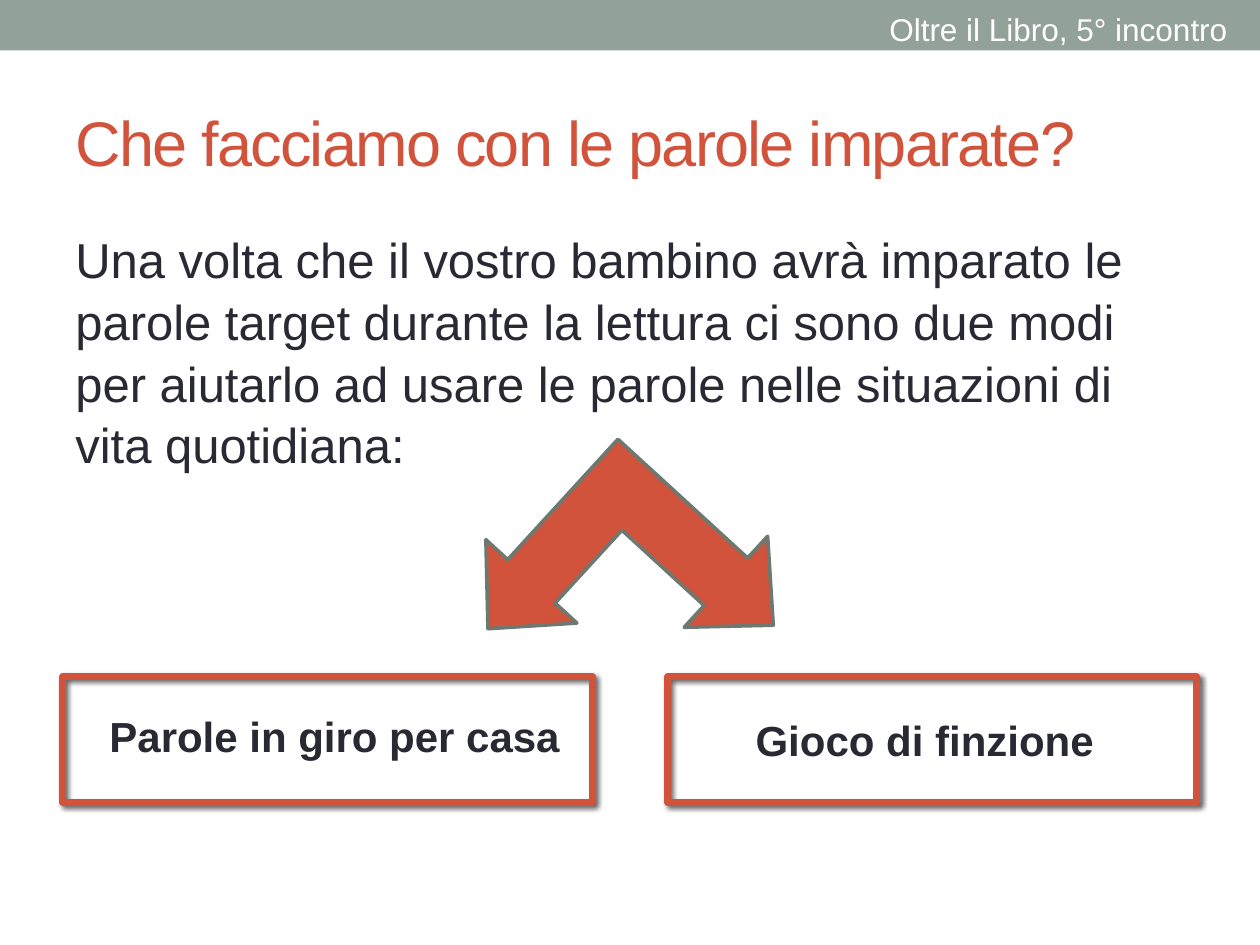
from lxml import etree
from pptx import Presentation
from pptx.dml.color import RGBColor
from pptx.enum.shapes import MSO_SHAPE
from pptx.enum.text import MSO_ANCHOR, PP_ALIGN
from pptx.oxml import parse_xml
from pptx.util import Inches, Pt

RECT, FORK = MSO_SHAPE.RECTANGLE, MSO_SHAPE.LEFT_UP_ARROW
TOP, MIDDLE = MSO_ANCHOR.TOP, MSO_ANCHOR.MIDDLE
LEFT, CENTER = PP_ALIGN.LEFT, PP_ALIGN.CENTER
SAGE = RGBColor(0x93, 0xA2, 0x99)
DARK_SAGE = RGBColor(0x6D, 0x78, 0x71)
RED = RGBColor(0xD2, 0x53, 0x3C)
INK = RGBColor(0x29, 0x29, 0x34)
WHITE = RGBColor(0xFF, 0xFF, 0xFF)

HEADER = "Oltre il Libro, 5° incontro"
TITLE = "Che facciamo con le parole imparate?"
BODY = (
    "Una volta che il vostro bambino avrà imparato le parole target "
    "durante la lettura ci sono due modi per aiutarlo ad usare le parole "
    "nelle situazioni di vita quotidiana:"
)
CHOICES = [
    ("Parole in giro per casa", (0.77, 5.59, 3.81, 0.5), LEFT, False),
    ("Gioco di finzione", (5.56, 5.62, 3.56, 0.5), CENTER, True),
]
MARGIN, FRAME_W, FRAME_H, FRAME_TOP = 0.5, 4.2, 1, 5.37
FRAME_STEP = 10 - 2 * MARGIN - FRAME_W

SHADOW = (
    '<a:effectLst xmlns:a="http://schemas.openxmlformats.org/drawingml/2006/main">'
    f'<a:outerShdw blurRad="{Pt(3)}" dist="{Pt(2)}" dir="2700000" rotWithShape="0">'
    '<a:srgbClr val="000000"><a:alpha val="60000"/></a:srgbClr>'
    "</a:outerShdw></a:effectLst>"
)


def add_text(s, text, box, size, color, align=LEFT, anchor=TOP, bold=False, wrap=True):
    tf = s.shapes.add_textbox(*map(Inches, box)).text_frame
    tf.word_wrap = wrap
    tf.vertical_anchor = anchor
    tf.text = text
    p = tf.paragraphs[0]
    p.alignment = align
    font = p.runs[0].font
    font.name, font.size, font.bold = "Arial", Pt(size), bold
    font.color.rgb = color
    return p


def add_box(s, kind, box, fill=None, line=None, width=0):
    sp = s.shapes.add_shape(kind, *map(Inches, box))
    sp.shadow.inherit = False
    if fill is None:
        sp.fill.background()
    else:
        sp.fill.solid()
        sp.fill.fore_color.rgb = fill
    if line is None:
        sp.line.fill.background()
    else:
        sp.line.color.rgb = line
        sp.line.width = Pt(width)
    return sp


def add_frame(s, left):
    sp = add_box(s, RECT, (left, FRAME_TOP, FRAME_W, FRAME_H), line=RED, width=4)
    props = sp._element.spPr
    props.remove(props.find("{*}effectLst"))
    props.append(parse_xml(SHADOW))
    etree.SubElement(props.find("{*}ln"), props.find("{*}ln").tag[:-2] + "round")


def main():
    prs = Presentation()
    prs.slide_width, prs.slide_height = Inches(10), Inches(7.5)
    s = prs.slides.add_slide(prs.slide_layouts[6])

    add_box(s, RECT, (0, 0, 10, 0.4), fill=SAGE)
    title = add_text(s, TITLE, (MARGIN, 0.58, 9, 1.08), 36, RED, anchor=MIDDLE)
    title.runs[0].font._element.set("spc", "-100")
    add_text(s, HEADER, (6.96, 0.03, 2.91, 0.4), 18, WHITE, wrap=False)
    body = add_text(s, BODY, (MARGIN, 1.75, 9, 5.33), 28, INK)
    body.line_spacing = 1.05

    for i, (text, box, align, wrap) in enumerate(CHOICES):
        add_frame(s, MARGIN + i * FRAME_STEP)
        add_text(s, text, box, 24, INK, align, bold=True, wrap=wrap)

    fork = add_box(s, FORK, (3.92, 3.61, 2.14, 2.04), RED, DARK_SAGE, 2.08)
    fork.rotation = 222.5
    for i, value in enumerate((0.25, 0.24, 0.25)):
        fork.adjustments[i] = value

    prs.save("out.pptx")


if __name__ == "__main__":
    main()
